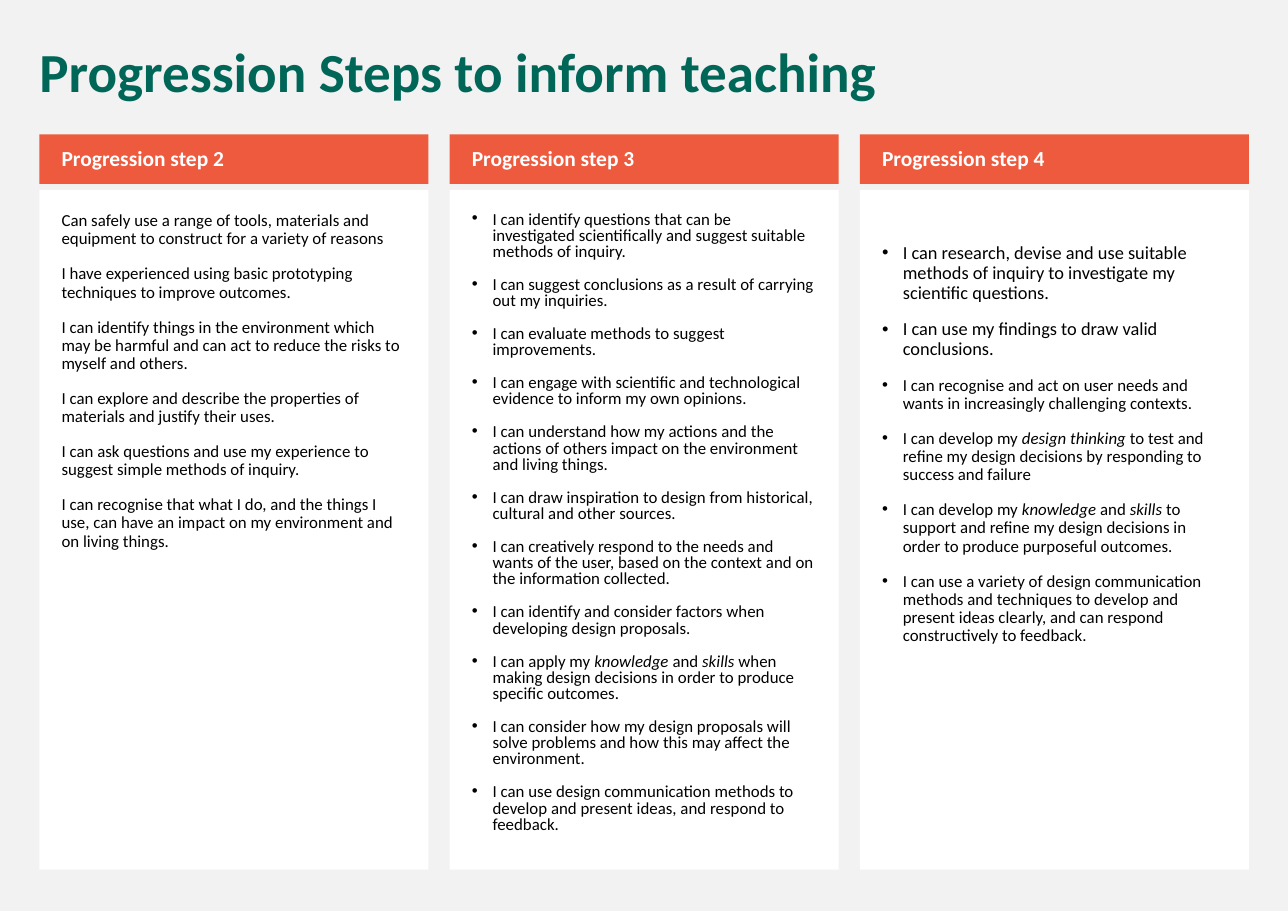
from dataclasses import dataclass

from lxml.etree import SubElement as Sub
from pptx import Presentation
from pptx.dml.color import RGBColor as Rgb
from pptx.dml.fill import FillFormat as Fill
from pptx.enum.shapes import MSO_SHAPE as Kind
from pptx.enum.text import MSO_ANCHOR as Anchor, PP_ALIGN as Align
from pptx.oxml.ns import qn
from pptx.slide import Slide
from pptx.text.text import TextFrame as Frame
from pptx.util import Cm, Pt

LEFT, PITCH, WIDTH = 0.91, 9.46, 8.97
HEAD_TOP, HEAD_HIGH = 3.1, 1.14
BODY_TOP, BODY_HIGH = 4.38, 15.67
PAD, INDENT = 0.51, 0.48


@dataclass
class Style:
    size: int = 11
    color: str = "000000"
    bold: bool = False
    space: float = 0.9
    bullet: bool = False


@dataclass
class Step:
    head: str
    lines: list[str]
    style: Style
    top: float = PAD
    large: int = 0


STEPS = [
    Step("Progression step 2", [
        "Can safely use a range of tools, materials and equipment to construct for a variety of reasons",
        "I have experienced using basic prototyping techniques to improve outcomes.",
        "I can identify things in the environment which may be harmful and can act to reduce the risks to myself and others.",
        "I can explore and describe the properties of materials and justify their uses.",
        "I can ask questions and use my experience to suggest simple methods of inquiry.",
        "I can recognise that what I do, and the things I use, can have an impact on my environment and on living things.",
    ], Style()),
    Step("Progression step 3", [
        "I can identify questions that can be investigated scientifically and suggest suitable methods of inquiry.",
        "I can suggest conclusions as a result of carrying out my inquiries.",
        "I can evaluate methods to suggest improvements.",
        "I can engage with scientific and technological evidence to inform my own opinions.",
        "I can understand how my actions and the actions of others impact on the environment and living things.",
        "I can draw inspiration to design from historical, cultural and other sources.",
        "I can creatively respond to the needs and wants of the user, based on the context and on the information collected.",
        "I can identify and consider factors when developing design proposals.",
        "I can apply my *knowledge* and *skills* when making design decisions in order to produce specific outcomes.",
        "I can consider how my design proposals will solve problems and how this may affect the environment.",
        "I can use design communication methods to develop and present ideas, and respond to feedback.",
    ], Style(space=0.8, bullet=True)),
    Step("Progression step 4", [
        "I can research, devise and use suitable methods of inquiry to investigate my scientific questions.",
        "I can use my findings to draw valid conclusions.",
        "I can recognise and act on user needs and wants in increasingly challenging contexts.",
        "I can develop my *design thinking* to test and refine my design decisions by responding to success and failure",
        "I can develop my *knowledge* and *skills* to support and refine my design decisions in order to produce purposeful outcomes.",
        "I can use a variety of design communication methods and techniques to develop and present ideas clearly, and can respond constructively to feedback.",
    ], Style(bullet=True), top=1.24, large=2),
]


def paint(fill: Fill, color: str) -> None:
    fill.solid()
    fill.fore_color.rgb = Rgb.from_string(color)


def write(frame: Frame, lines: list[str], style: Style, large: int = 0) -> None:
    frame.word_wrap = True
    for row, line in enumerate(lines):
        para = frame.add_paragraph() if row else frame.paragraphs[0]
        para.alignment = Align.LEFT
        para.line_spacing = style.space
        para.space_before = Pt(11)
        if style.bullet:
            props = para._p.get_or_add_pPr()
            props.set("marL", str(Cm(INDENT)))
            props.set("indent", str(-Cm(INDENT)))
            Sub(props, qn("a:buFont"), typeface="Arial")
            Sub(props, qn("a:buChar"), char="•")
        for part, text in enumerate(line.split("*")):
            run = para.add_run()
            run.text = text
            font = run.font
            font.name = "Calibri"
            font.size = Pt(12 if row < large else style.size)
            font.bold = style.bold
            font.italic = part % 2 == 1
            paint(font.fill, style.color)


def panel(slide: Slide, left: float, top: float, high: float, color: str) -> Frame:
    box = slide.shapes.add_shape(Kind.RECTANGLE, Cm(left), Cm(top), Cm(WIDTH), Cm(high))
    box.shadow.inherit = False
    box.line.fill.background()
    paint(box.fill, color)
    frame = box.text_frame
    frame.margin_left = Cm(PAD)
    return frame


def column(slide: Slide, step: Step, left: float) -> None:
    body = panel(slide, left, BODY_TOP, BODY_HIGH, "FFFFFF")
    body.vertical_anchor = Anchor.TOP
    body.margin_top = Cm(step.top)
    body.margin_right = body.margin_bottom = Cm(PAD)
    write(body, step.lines, step.style, step.large)
    head = panel(slide, left, HEAD_TOP, HEAD_HIGH, "ED5A3E")
    head.vertical_anchor = Anchor.MIDDLE
    write(head, [step.head], Style(14, "FFFFFF", True))


def main() -> None:
    deck = Presentation()
    deck.slide_width, deck.slide_height = Cm(29.7), Cm(21)
    slide = deck.slides.add_slide(deck.slide_layouts[6])
    paint(slide.background.fill, "F2F2F2")
    for col, step in enumerate(STEPS):
        column(slide, step, LEFT + col * PITCH)
    title = slide.shapes.add_textbox(Cm(0.66), Cm(0.91), Cm(28.14), Cm(1.65))
    write(title.text_frame, ["Progression Steps to inform teaching"], Style(36, "006758", True))
    deck.save("out.pptx")


if __name__ == "__main__":
    main()
